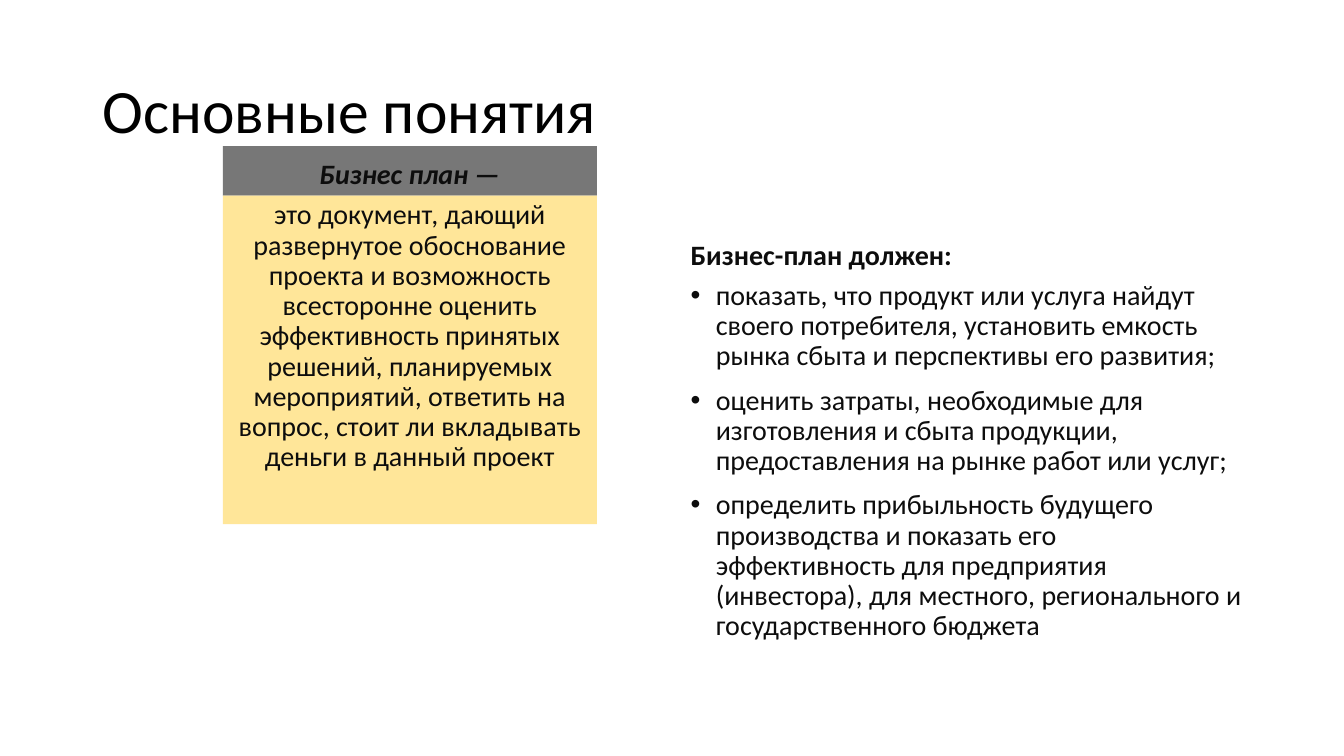
from dataclasses import dataclass

from lxml.etree import SubElement
from pptx import Presentation
from pptx.dml.color import RGBColor
from pptx.enum.text import MSO_ANCHOR, MSO_AUTO_SIZE, PP_ALIGN
from pptx.oxml.ns import qn
from pptx.slide import Slide
from pptx.text.text import TextFrame
from pptx.util import Inches, Pt

COLORS = {"ink": "0D0D0D", "title": "000000", "head": "777777", "note": "FFE699"}


@dataclass
class Block:
    slot: int
    box: tuple[float, float, float, float]
    lines: list[str]
    style: dict
    fill: str = ""


def paint(name: str) -> RGBColor:
    return RGBColor.from_string(COLORS[name])


def write(frame: TextFrame, lines: list[str], *, size: int = 20, color: str = "ink",
          bold: bool = False, italic: bool = False, align: PP_ALIGN = PP_ALIGN.LEFT,
          anchor: MSO_ANCHOR = MSO_ANCHOR.TOP, before: int = 10,
          bullet: bool = False) -> None:
    frame.word_wrap = True
    frame.auto_size = MSO_AUTO_SIZE.NONE
    frame.vertical_anchor = anchor
    for order, line in enumerate(lines):
        para = frame.add_paragraph() if order else frame.paragraphs[0]
        para.alignment = align
        para.line_spacing = 0.9
        para.space_before = Pt(before)
        run = para.add_run()
        run.text = line
        font = run.font
        font.name, font.size = "Calibri", Pt(size)
        font.bold, font.italic = bold, italic
        font.color.rgb = paint(color)
        props = para._p.get_or_add_pPr()
        indent = Inches(0.25) if bullet else 0
        props.set("marL", str(indent))
        props.set("indent", str(-indent))
        if bullet:
            SubElement(props, qn("a:buFont"), typeface="Arial")
            SubElement(props, qn("a:buChar"), char="•")
        else:
            SubElement(props, qn("a:buNone"))


def draw(slide: Slide, block: Block) -> None:
    shape = slide.placeholders[block.slot]
    shape.left, shape.top, shape.width, shape.height = map(Inches, block.box)
    if block.fill:
        shape.fill.solid()
        shape.fill.fore_color.rgb = paint(block.fill)
    write(shape.text_frame, block.lines, **block.style)


BLOCKS = [
    Block(0, (0.92, 0.4, 11.5, 1.45), ["Основные понятия"],
          dict(size=44, color="title", anchor=MSO_ANCHOR.MIDDLE, before=0)),
    Block(1, (2.21, 1.45, 3.71, 0.49), ["Бизнес план —"],
          dict(bold=True, italic=True, align=PP_ALIGN.CENTER, anchor=MSO_ANCHOR.BOTTOM),
          "head"),
    Block(2, (2.21, 1.94, 3.71, 3.26),
          ["это документ, дающий развернутое обоснование проекта и возможность "
           "всесторонне оценить эффективность принятых решений, планируемых "
           "мероприятий, ответить на вопрос, стоит ли вкладывать деньги в данный проект"],
          dict(align=PP_ALIGN.CENTER), "note"),
    Block(3, (6.75, 1.84, 5.67, 0.9), ["Бизнес-план должен:"],
          dict(bold=True, anchor=MSO_ANCHOR.BOTTOM)),
    Block(4, (6.75, 2.74, 5.67, 4.03),
          ["показать, что продукт или услуга найдут своего потребителя, установить "
           "емкость рынка сбыта и перспективы его развития;",
           "оценить затраты, необходимые для изготовления и сбыта продукции, "
           "предоставления на рынке работ или услуг;",
           "определить прибыльность будущего производства и показать его "
           "эффективность для предприятия (инвестора), для местного, "
           "регионального и государственного бюджета"],
          dict(bullet=True)),
]


def main() -> None:
    deck = Presentation()
    deck.slide_width, deck.slide_height = Inches(13.33), Inches(7.5)
    slide = deck.slides.add_slide(deck.slide_layouts.get_by_name("Comparison"))
    for block in BLOCKS:
        draw(slide, block)
    deck.save("out.pptx")


if __name__ == "__main__":
    main()
